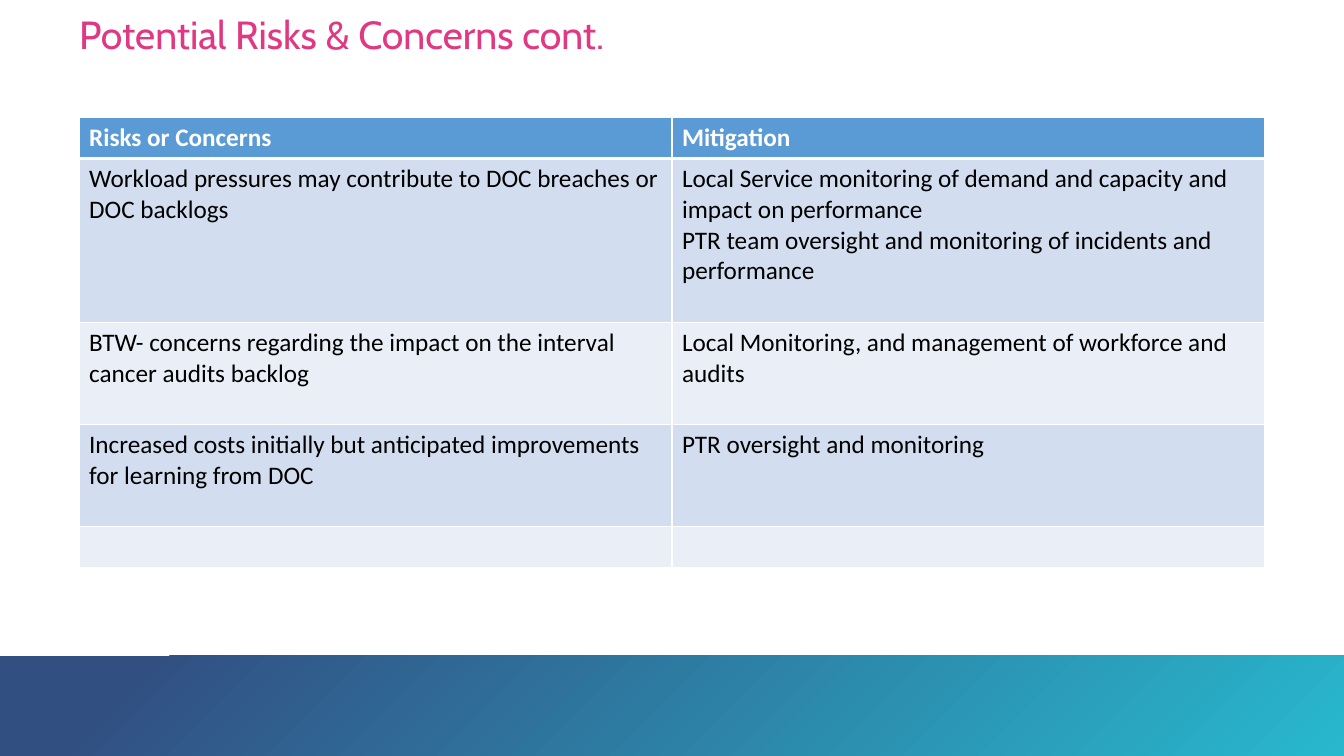
from lxml.etree import SubElement
from pptx import Presentation
from pptx.dml.color import RGBColor
from pptx.enum.shapes import MSO_SHAPE
from pptx.oxml import parse_xml
from pptx.oxml.ns import nsdecls, qn
from pptx.util import Pt

NAVY = RGBColor(0x32, 0x4F, 0x82)
TEAL = RGBColor(0x28, 0xB8, 0xCE)
PINK = RGBColor(0xE0, 0x38, 0x82)
BLUE = RGBColor(0x5B, 0x9B, 0xD5)
PALE = RGBColor(0xD2, 0xDE, 0xEF)
MIST = RGBColor(0xEA, 0xEF, 0xF7)
WHITE = RGBColor(0xFF, 0xFF, 0xFF)
BLACK = RGBColor(0, 0, 0)

WIDE, HIGH = 960, 540
LEFT, SPAN = 56.5, 847
HEADS = (29, 117, 73, 73, 29)
ROWS = [
    ("Risks or Concerns", "Mitigation"),
    ("Workload pressures may contribute to DOC breaches or DOC backlogs",
     "Local Service monitoring of demand and capacity and impact on performance\n"
     "PTR team oversight and monitoring of incidents and performance"),
    ("BTW- concerns regarding the impact on the interval cancer audits backlog",
     "Local Monitoring, and management of workforce and audits"),
    ("Increased costs initially but anticipated improvements for learning from DOC",
     "PTR oversight and monitoring"),
    ("", ""),
]


def write(frame, text, font="Calibri", size=18, color=BLACK, bold=False, space=None):
    frame.word_wrap = True
    frame.text = text
    for para in frame.paragraphs:
        para.line_spacing = space
        para.font.size = Pt(size)
        for run in para.runs:
            run.font.name = font
            run.font.size = Pt(size)
            run.font.bold = bold
            run.font.color.rgb = color


def border(cell, top, bottom):
    """Put white lines on all four sides; the widths are in points."""
    props = cell._tc.get_or_add_tcPr()
    sides = (("L", 1), ("R", 1), ("T", top), ("B", bottom))
    for spot, (side, width) in enumerate(sides):
        line = parse_xml(f'<a:ln{side} {nsdecls("a")} w="{Pt(width)}"/>')
        fill = SubElement(line, qn("a:solidFill"))
        SubElement(fill, qn("a:srgbClr")).set("val", str(WHITE))
        props.insert(spot, line)


def add_band(slide):
    top = 468.5
    band = slide.shapes.add_shape(
        MSO_SHAPE.RECTANGLE, Pt(0), Pt(top), Pt(WIDE), Pt(HIGH - top))
    band.shadow.inherit = False
    band.line.fill.background()
    band.fill.gradient()
    band.fill.gradient_angle = 315
    stops = zip(band.fill.gradient_stops, ((0.1, NAVY), (1, TEAL)))
    for stop, (place, color) in stops:
        stop.position = place
        stop.color.rgb = color


def add_title(slide, text):
    box = slide.shapes.add_textbox(Pt(LEFT), Pt(11.5), Pt(SPAN), Pt(31))
    frame = box.text_frame
    frame.margin_left = frame.margin_right = 0
    frame.margin_top = frame.margin_bottom = 0
    write(frame, text, font="Cabin", size=28, color=PINK, space=0.9)


def add_risks(slide):
    table = slide.shapes.add_table(
        len(ROWS), 2, Pt(LEFT), Pt(84), Pt(SPAN), Pt(sum(HEADS))).table
    for r, (texts, height) in enumerate(zip(ROWS, HEADS)):
        table.rows[r].height = Pt(height)
        head = r == 0
        for c, text in enumerate(texts):
            cell = table.cell(r, c)
            cell.fill.solid()
            cell.fill.fore_color.rgb = BLUE if head else PALE if r % 2 else MIST
            border(cell, top=3 if r == 1 else 1, bottom=3 if head else 1)
            write(cell.text_frame, text, color=WHITE if head else BLACK, bold=head)


def main():
    deck = Presentation()
    deck.slide_width, deck.slide_height = Pt(WIDE), Pt(HIGH)
    slide = deck.slides.add_slide(deck.slide_layouts[6])
    add_band(slide)
    add_risks(slide)
    add_title(slide, "Potential Risks & Concerns cont.")
    deck.save("out.pptx")


if __name__ == "__main__":
    main()
